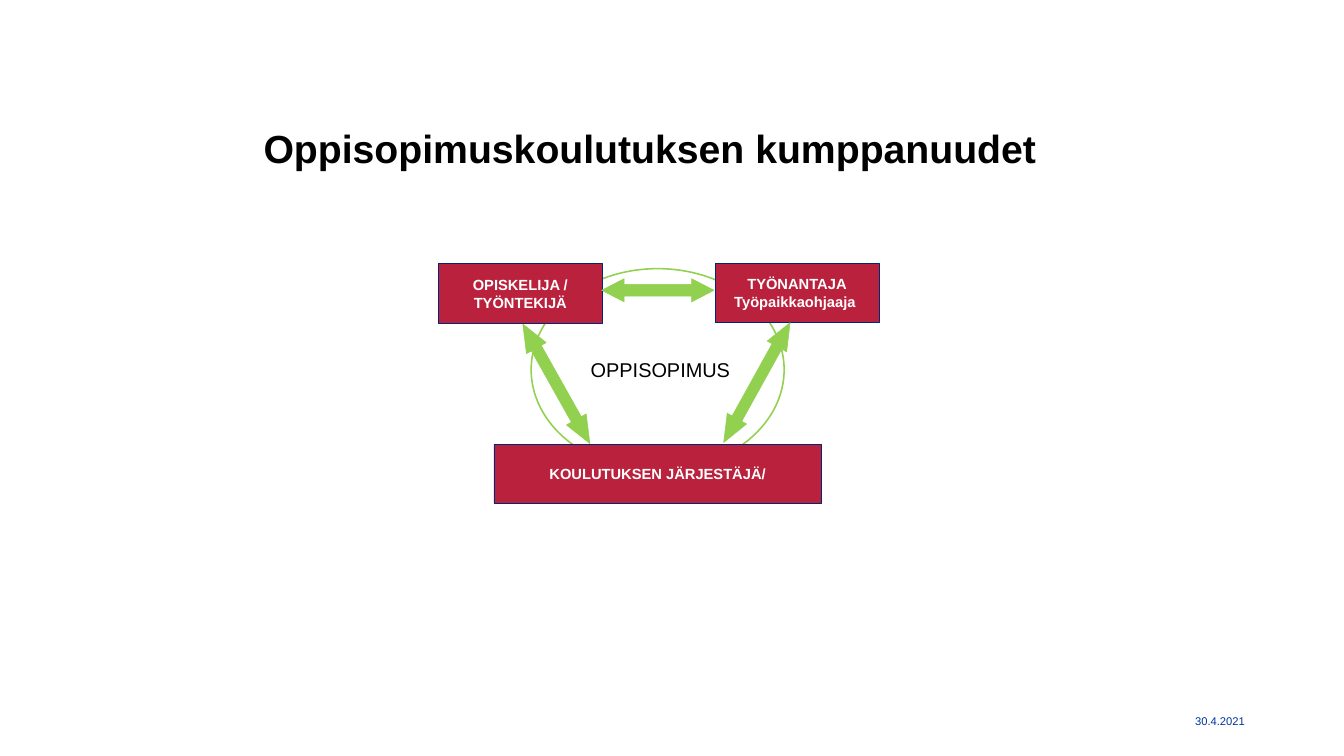
from pptx import Presentation
from pptx.dml.color import RGBColor
from pptx.enum.shapes import MSO_SHAPE as Shape
from pptx.enum.text import MSO_ANCHOR as Anchor, PP_ALIGN as Align
from pptx.util import Inches, Pt

BLACK = RGBColor(0x00, 0x00, 0x00)
WHITE = RGBColor(0xFF, 0xFF, 0xFF)
RED = RGBColor(0xB9, 0x21, 0x3D)
NAVY = RGBColor(0x00, 0x26, 0x78)
GREEN = RGBColor(0x92, 0xD0, 0x50)
BLUE = RGBColor(0x00, 0x33, 0xA0)

BOX_HEIGHT = 1.18
PARTNERS = [
    (0, 0.01, 3.25, ["OPISKELIJA /", "TYÖNTEKIJÄ"], False),
    (5.49, 0, 3.25, ["TYÖNANTAJA", "Työpaikkaohjaaja "], True),
    (1.1, 3.59, 6.5, ["KOULUTUKSEN JÄRJESTÄJÄ/"], False),
]
ARROWS = [
    (3.24, 0.31, 2.23, 0.46, 0, 0.97),
    (0.98, 2.17, 2.72, 0.45, 60.7, 1.22),
    (4.96, 2.15, 2.72, 0.44, 119, 1.23),
]


def write(shape, lines, size, color, bold=False, align=Align.CENTER,
          anchor=Anchor.MIDDLE, margins=(0.14, 0.07), wrap=True, spacing=1.0):
    frame = shape.text_frame
    across, down = (Inches(margin) for margin in margins)
    frame_format = {
        "word_wrap": wrap, "vertical_anchor": anchor,
        "margin_left": across, "margin_right": across,
        "margin_top": down, "margin_bottom": down,
    }
    for name, value in frame_format.items():
        setattr(frame, name, value)
    font_format = {"name": "Arial", "size": Pt(size), "bold": bold}
    for index, line in enumerate(lines):
        para = frame.add_paragraph() if index else frame.paragraphs[0]
        para.alignment = align
        para.line_spacing = spacing
        span = para.add_run()
        span.text = line
        for name, value in font_format.items():
            setattr(span.font, name, value)
        span.font.color.rgb = color


def add_figure(page, kind, left, top, width, height, fill, line, weight):
    figure = page.shapes.add_shape(
        kind, Inches(left), Inches(top), Inches(width), Inches(height))
    figure.shadow.inherit = False
    if fill is None:
        figure.fill.background()
    else:
        figure.fill.solid()
        figure.fill.fore_color.rgb = fill
    figure.line.color.rgb = line
    figure.line.width = Pt(weight)
    return figure


def add_text(page, left, top, width, height, text, size, color, **text_format):
    box = page.shapes.add_textbox(
        Inches(left), Inches(top), Inches(width), Inches(height))
    write(box, [text], size, color, **text_format)


def add_title(page, left, top, width, height):
    add_text(page, left, top, width, height,
             "Oppisopimuskoulutuksen kumppanuudet", 56, BLACK, bold=True,
             align=Align.LEFT, anchor=Anchor.BOTTOM, margins=(0, 0), spacing=0.9)


def add_partnership(page, left, top):
    circle = add_figure(page, Shape.OVAL, left + 1.84, top + 0.11, 5.02, 4.01,
                        None, GREEN, 2.25)
    write(circle, [" OPPISOPIMUS"], 28.5, BLACK, wrap=False)
    for across, down, width, lines, wrap in PARTNERS:
        partner = add_figure(page, Shape.RECTANGLE, left + across, top + down,
                             width, BOX_HEIGHT, RED, NAVY, 0.75)
        write(partner, lines, 21, WHITE, bold=True, wrap=wrap)
    for across, down, width, height, angle, head in ARROWS:
        arrow = add_figure(page, Shape.LEFT_RIGHT_ARROW, left + across, top + down,
                           width, height, GREEN, GREEN, 0.75)
        arrow.rotation = angle
        arrow.adjustments[0] = 0.5
        arrow.adjustments[1] = head


def add_date(page, left, top, width, height):
    add_text(page, left, top, width, height, "30.4.2021", 16, BLUE,
             align=Align.RIGHT, margins=(0.1, 0.05))


def main():
    deck = Presentation()
    deck.slide_width = Inches(26.67)
    deck.slide_height = Inches(15)
    page = deck.slides.add_slide(deck.slide_layouts[6])
    add_title(page, 5.23, 2.08, 15.66, 1.33)
    add_partnership(page, 8.7, 5.22)
    add_date(page, 21.65, 13.9, 3.15, 0.8)
    deck.save("out.pptx")


if __name__ == "__main__":
    main()
